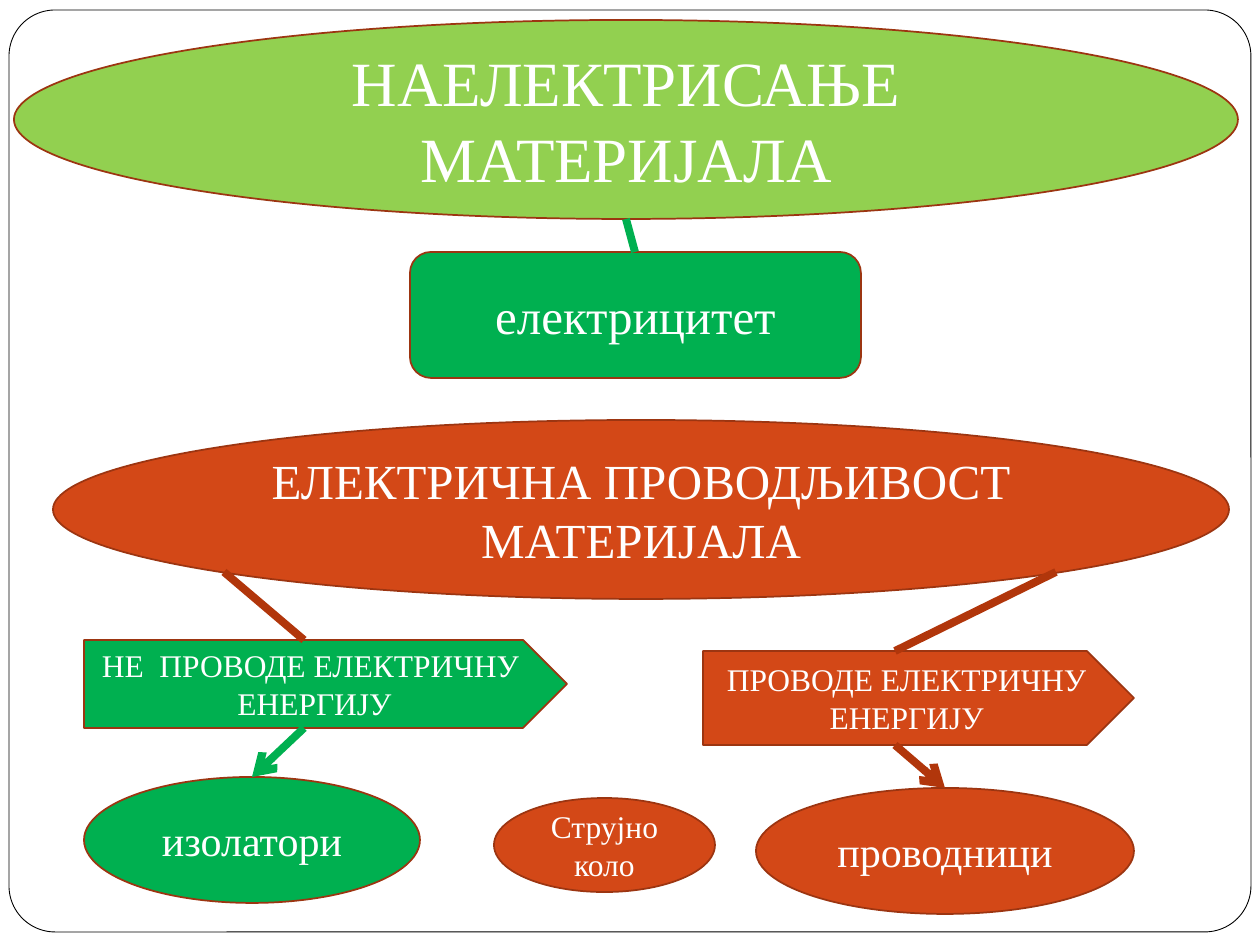
from lxml import etree
from pptx import Presentation
from pptx.dml.color import RGBColor
from pptx.enum.shapes import MSO_CONNECTOR, MSO_SHAPE
from pptx.enum.text import MSO_ANCHOR, PP_ALIGN
from pptx.oxml.ns import qn
from pptx.util import Pt

PX = 914400 / 126
FONT = "Times New Roman"
BLACK = RGBColor(0x00, 0x00, 0x00)
WHITE = RGBColor(0xFF, 0xFF, 0xFF)
LIME = RGBColor(0x92, 0xD0, 0x50)
GREEN = RGBColor(0x00, 0xB0, 0x50)
ORANGE = RGBColor(0xD3, 0x48, 0x17)
OUTLINE = RGBColor(0x9C, 0x35, 0x11)
RUST = RGBColor(0xB1, 0x36, 0x0B)

ELLIPSE = MSO_SHAPE.OVAL
ROUNDED = MSO_SHAPE.ROUNDED_RECTANGLE
PENTAGON = MSO_SHAPE.PENTAGON
STRAIGHT = MSO_CONNECTOR.STRAIGHT
MIDDLE = MSO_ANCHOR.MIDDLE
CENTER = PP_ALIGN.CENTER

CONCEPTS = [
    (ELLIPSE, (14, 20, 1224, 199), LIME, 36, "НАЕЛЕКТРИСАЊЕ МАТЕРИЈАЛА"),
    (ELLIPSE, (53, 420, 1176, 179), ORANGE, 28, "ЕЛЕКТРИЧНА ПРОВОДЉИВОСТ МАТЕРИЈАЛА"),
    (PENTAGON, (84, 640, 483, 88), GREEN, 18, "НЕ  ПРОВОДЕ ЕЛЕКТРИЧНУ \vЕНЕРГИЈУ"),
    (PENTAGON, (703, 651, 431, 94), ORANGE, 18, "ПРОВОДЕ ЕЛЕКТРИЧНУ\nЕНЕРГИЈУ"),
    (ELLIPSE, (84, 777, 336, 126), GREEN, 24, "изолатори"),
    (ELLIPSE, (756, 788, 378, 126), ORANGE, 24, "проводници"),
    (ROUNDED, (410, 252, 451, 126), GREEN, 28, "електрицитет"),
    (ELLIPSE, (494, 798, 221, 94), ORANGE, 18, "Струјно коло"),
]

LINKS = [
    ((635, 252), (626, 219), GREEN, False),
    ((224, 572), (304, 640), RUST, False),
    ((1056, 572), (895, 651), RUST, False),
    ((895, 745), (945, 788), RUST, True),
    ((304, 728), (252, 777), GREEN, True),
]


def emu(pixels):
    return round(pixels * PX)


def apply_format(target, values):
    for name, value in values.items():
        setattr(target, name, value)


def add_box(slide, kind, box, fill, outline, width):
    shape = slide.shapes.add_shape(kind, *map(emu, box))
    shape.shadow.inherit = False
    shape.fill.solid()
    shape.fill.fore_color.rgb = fill
    shape.line.color.rgb = outline
    shape.line.width = Pt(width)
    return shape


def add_concept(slide, kind, box, fill, size, text):
    shape = add_box(slide, kind, box, fill, OUTLINE, 1)
    frame = shape.text_frame
    apply_format(frame, {"text": text, "word_wrap": True, "vertical_anchor": MIDDLE})
    for paragraph in frame.paragraphs:
        paragraph.alignment = CENTER
        for run in paragraph.runs:
            apply_format(run.font, {"name": FONT, "size": Pt(size)})
            run.font.color.rgb = WHITE


def add_link(slide, start, end, color, has_arrow):
    connector = slide.shapes.add_connector(STRAIGHT, *map(emu, start + end))
    connector.line.color.rgb = color
    connector.line.width = Pt(4.5)
    if has_arrow:
        line = connector.line._get_or_add_ln()
        etree.SubElement(line, qn("a:tailEnd"), type="arrow")
    etree.SubElement(connector._element.spPr, qn("a:effectLst"))


def main():
    presentation = Presentation()
    apply_format(presentation, {"slide_width": emu(1260), "slide_height": emu(945)})
    slide = presentation.slides.add_slide(presentation.slide_layouts[6])
    border = add_box(slide, ROUNDED, (9, 10, 1242, 922), WHITE, BLACK, 0.5)
    border.adjustments[0] = 0.05
    for concept in CONCEPTS:
        add_concept(slide, *concept)
    for link in LINKS:
        add_link(slide, *link)
    presentation.save("out.pptx")


if __name__ == "__main__":
    main()
